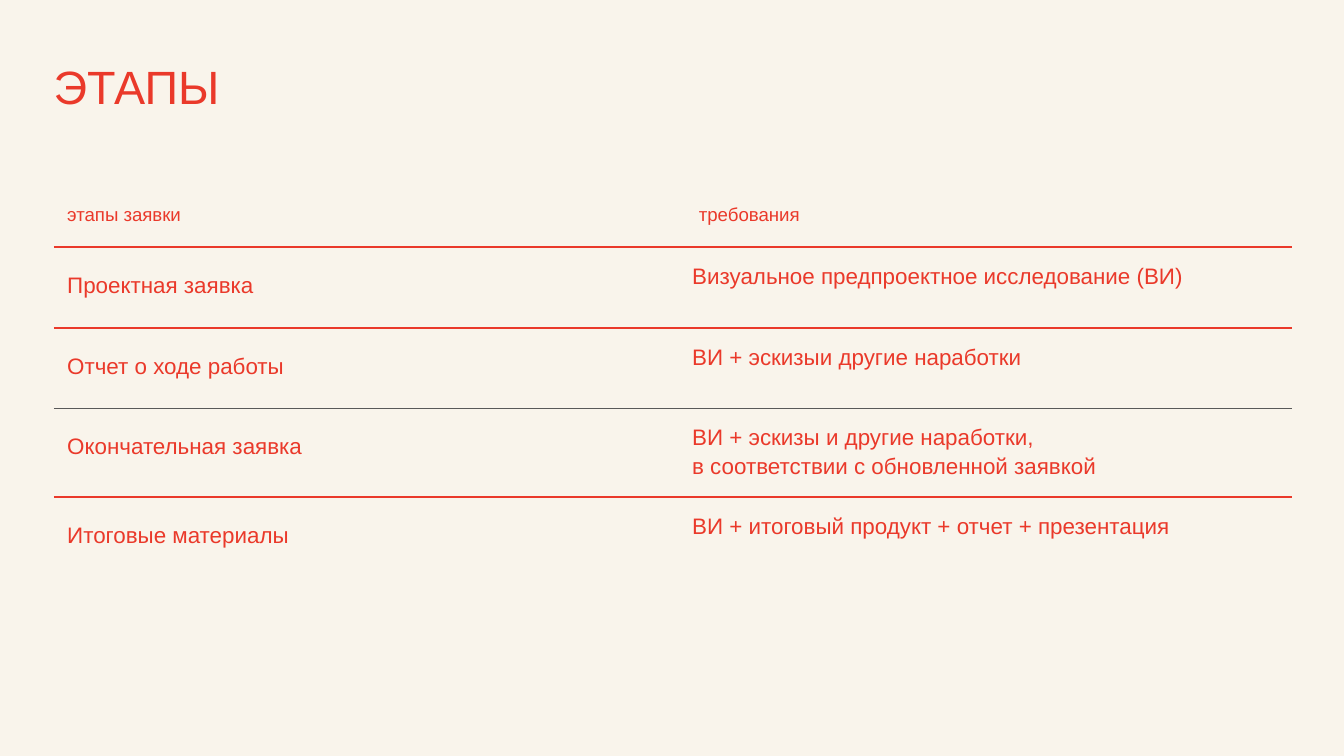
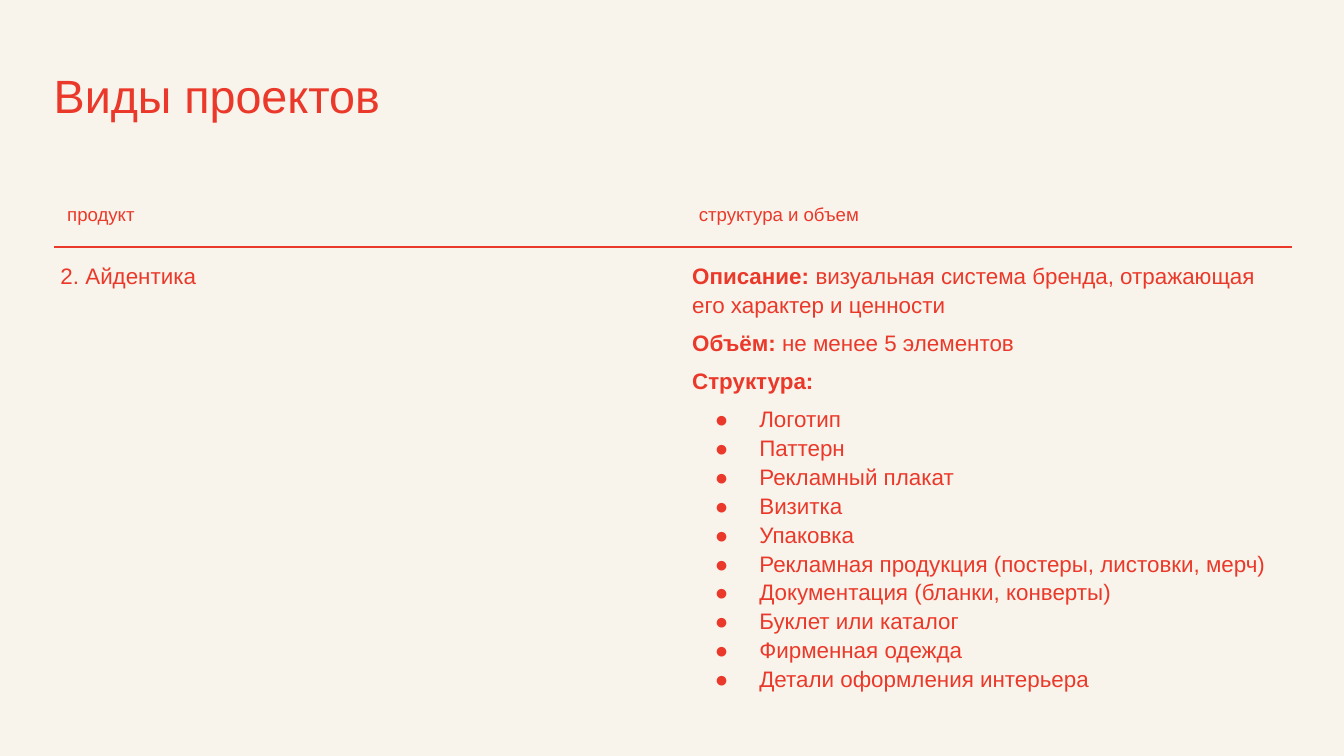
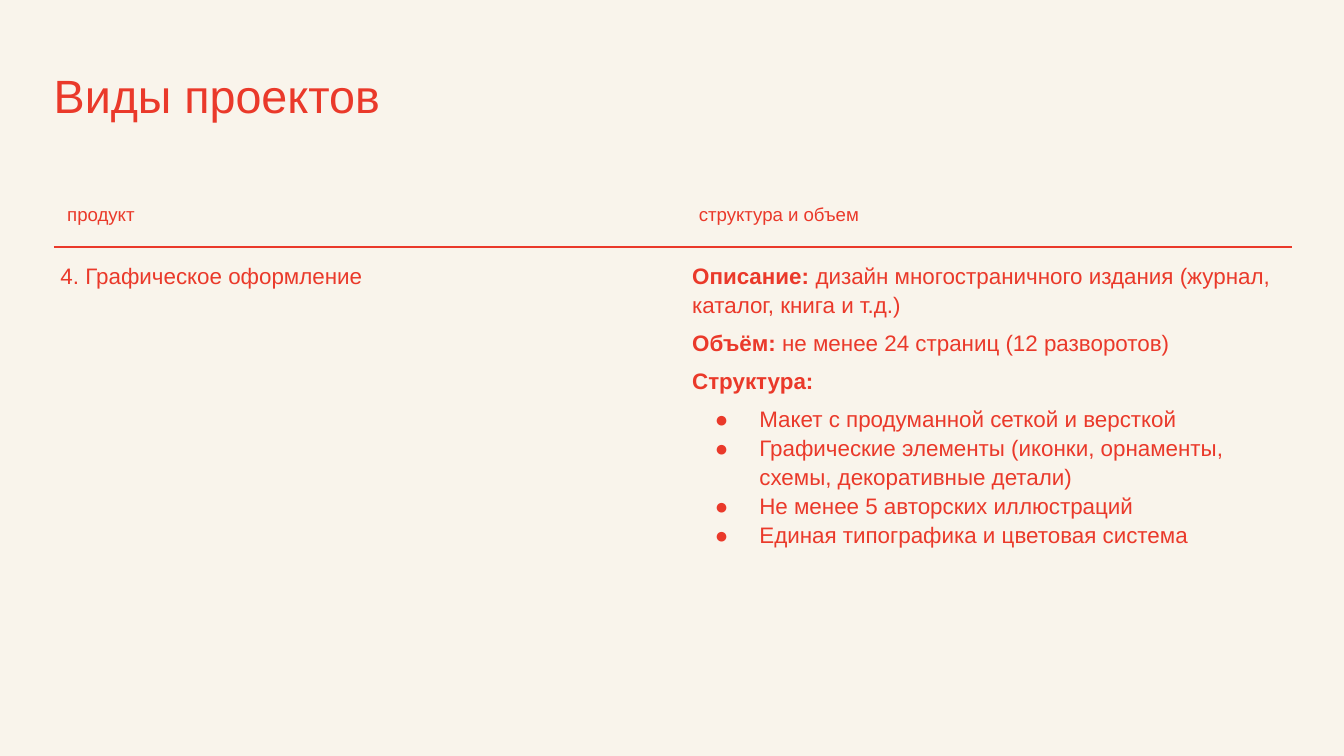
from dataclasses import dataclass
from typing import Optional

import lxml.etree
import pptx
import pptx.dml.color
import pptx.enum.text
import pptx.oxml.ns
import pptx.slide
import pptx.util

Pt = pptx.util.Pt
RGBColor = pptx.dml.color.RGBColor

RED = RGBColor(0xEA, 0x39, 0x2A)
CREAM = RGBColor(0xF9, 0xF4, 0xEB)
GREY = RGBColor(0x59, 0x59, 0x59)

FONT = "Arial"
LEFT = 28.8
COLUMNS = (338.4, 324.7)
HEAD_ROW = 30.2
WIDE, SLIM = 7.2, 3.6
PLAIN_STYLE = "{2D5ABB26-0587-4C30-8999-92F81FD0307C}"


@dataclass(frozen=True)
class Para:
    text: str
    label: str = ""
    size: float = 12
    lead: float = 1.15
    before: float = 0
    after: float = 0
    dot: bool = False


@dataclass(frozen=True)
class Rule:
    color: RGBColor = RED
    width: float = 0.75


@dataclass(frozen=True)
class Cell:
    paras: list[Para]
    inset: float = SLIM


@dataclass(frozen=True)
class Row:
    cells: tuple[Cell, Cell]
    height: float = HEAD_ROW
    rule: Optional[Rule] = None


@dataclass(frozen=True)
class Page:
    title: str
    width: float
    lead: float
    rows: list[Row]


def head_row(left: str, right: str) -> Row:
    first, second = (Cell([Para(text, size=10, lead=1)], WIDE) for text in (left, right))
    return Row((first, second), rule=Rule())


def stage_row(stage: str, need: str, height: float, rule: Optional[Rule] = None) -> Row:
    return Row((Cell([Para(stage, lead=1.5)], WIDE), Cell([Para(need)])), height, rule)


def type_page(name: str, about: str, scope: str, parts: list[str]) -> Page:
    notes = [
        Para(about, "Описание: "),
        Para(scope, "Объём: ", before=5),
        Para("", "Структура:", before=5),
    ]
    dots = [Para(part, before=0 if i else 5, dot=True) for i, part in enumerate(parts)]
    body = Row((Cell([Para(name, after=5)]), Cell(notes + dots)))
    return Page("Виды проектов", 456.5, 1.15, [head_row("продукт", "структура и объем"), body])


PAGES = [
    Page("ЭТАПЫ", 331.2, 1, [
        head_row("этапы заявки", "требования"),
        stage_row("Проектная заявка", "Визуальное предпроектное исследование (ВИ)",
                  43.2, Rule(width=1)),
        stage_row("Отчет о ходе работы", "ВИ + эскизыи другие наработки",
                  43.2, Rule(GREY)),
        stage_row("Окончательная заявка",
                  "ВИ + эскизы и другие наработки,\nв соответствии с обновленной заявкой",
                  45.2, Rule()),
        stage_row("Итоговые материалы", "ВИ + итоговый продукт + отчет + презентация",
                  HEAD_ROW),
    ]),
    type_page("2. Айдентика",
              "визуальная система бренда, отражающая его характер и ценности",
              "не менее 5 элементов",
              ["Логотип", "Паттерн", "Рекламный плакат", "Визитка", "Упаковка",
               "Рекламная продукция (постеры, листовки, мерч)",
               "Документация (бланки, конверты)", "Буклет или каталог",
               "Фирменная одежда", "Детали оформления интерьера"]),
    type_page("4. Графическое оформление",
              "дизайн многостраничного издания (журнал, каталог, книга и т.д.)",
              "не менее 24 страниц (12 разворотов)",
              ["Макет с продуманной сеткой и версткой",
               "Графические элементы (иконки, орнаменты, схемы, декоративные детали)",
               "Не менее 5 авторских иллюстраций",
               "Единая типографика и цветовая система"]),
]


def add_node(parent, tag: str, **attrs: str):
    node = lxml.etree.SubElement(parent, pptx.oxml.ns.qn(tag))
    for key, value in attrs.items():
        node.set(key, value)
    return node


def add_run(target, text: str, size: float, bold: bool) -> None:
    run = target.add_run()
    run.text = text
    run.font.name = FONT
    run.font.size = Pt(size)
    run.font.bold = bold
    run.font.color.rgb = RED


def add_dot(target) -> None:
    props = target._p.get_or_add_pPr()
    props.set("marL", str(Pt(36)))
    props.set("indent", str(-Pt(23.8)))
    add_node(add_node(props, "a:buClr"), "a:srgbClr", val=str(RED))
    add_node(props, "a:buFont", typeface=FONT)
    add_node(props, "a:buChar", char="●")


def fill_text(frame, paras: list[Para]) -> None:
    for i, para in enumerate(paras):
        target = frame.add_paragraph() if i else frame.paragraphs[0]
        target.line_spacing = para.lead
        target.space_before = Pt(para.before)
        target.space_after = Pt(para.after)
        if para.dot:
            add_dot(target)
        if para.label:
            add_run(target, para.label, para.size, True)
        if para.text:
            for j, line in enumerate(para.text.split("\n")):
                if j:
                    target.add_line_break()
                add_run(target, line, para.size, False)


def add_rule(cell, rule: Rule, tag: str) -> None:
    props = cell._tc.get_or_add_tcPr()
    line = add_node(props, tag, w=str(Pt(rule.width)))
    add_node(add_node(line, "a:solidFill"), "a:srgbClr", val=str(rule.color))
    add_node(line, "a:prstDash", val="solid")


def add_title(slide: pptx.slide.Slide, page: Page) -> None:
    box = slide.shapes.add_textbox(Pt(LEFT), Pt(28.1), Pt(page.width), Pt(33.8))
    frame = box.text_frame
    frame.word_wrap = True
    frame.vertical_anchor = pptx.enum.text.MSO_ANCHOR.TOP
    frame.margin_left, frame.margin_top = 0, Pt(3)
    frame.margin_right = frame.margin_bottom = Pt(WIDE)
    fill_text(frame, [Para(page.title, size=25, lead=page.lead)])


def add_grid(slide: pptx.slide.Slide, rows: list[Row]) -> None:
    high = sum(row.height for row in rows)
    shape = slide.shapes.add_table(
        len(rows), len(COLUMNS), Pt(LEFT), Pt(102.2), Pt(sum(COLUMNS)), Pt(high))
    shape.element.xpath(".//a:tableStyleId")[0].text = PLAIN_STYLE
    table = shape.table
    table.first_row = table.horz_banding = False
    for column, width in zip(table.columns, COLUMNS):
        column.width = Pt(width)
    above = None
    for i, row in enumerate(rows):
        table.rows[i].height = Pt(row.height)
        for j, item in enumerate(row.cells):
            cell = table.cell(i, j)
            cell.margin_left = cell.margin_right = Pt(item.inset)
            cell.margin_top = cell.margin_bottom = Pt(WIDE)
            fill_text(cell.text_frame, item.paras)
            if above:
                add_rule(cell, above, "a:lnT")
            if row.rule:
                add_rule(cell, row.rule, "a:lnB")
            cell.fill.background()
        above = row.rule


def main() -> None:
    deck = pptx.Presentation()
    deck.slide_width, deck.slide_height = Pt(720), Pt(405)
    for page in PAGES:
        slide = deck.slides.add_slide(deck.slide_layouts[6])
        fill = slide.background.fill
        fill.solid()
        fill.fore_color.rgb = CREAM
        add_title(slide, page)
        add_grid(slide, page.rows)
    deck.save("out.pptx")


if __name__ == "__main__":
    main()
